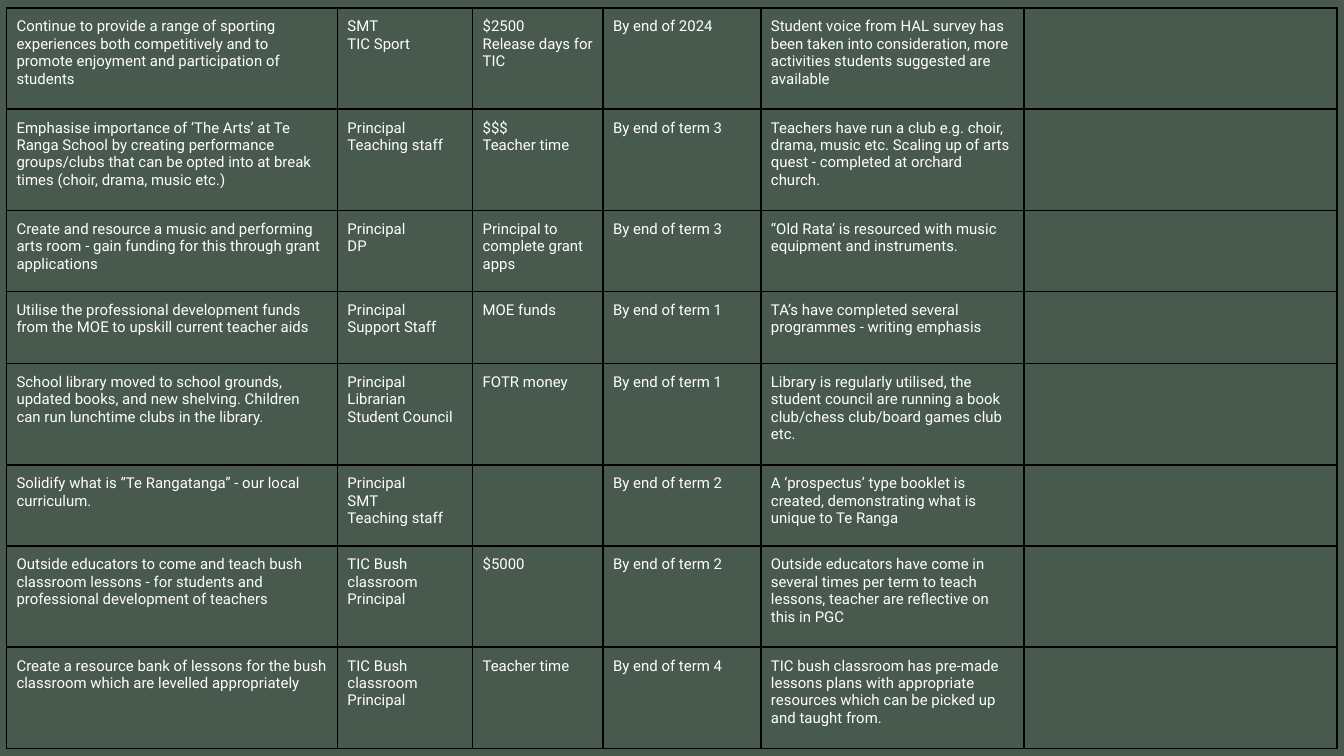
from lxml.etree import SubElement
from pptx import Presentation
from pptx.dml.color import RGBColor as Color
from pptx.oxml.ns import qn
from pptx.util import Pt

COLORS = {"background": "485A4E", "text": "FFFFFF", "border": "000000"}
COLUMN_WIDTHS = [177.3, 72.4, 69.9, 84.6, 140.9, 167.7]
ROW_HEIGHTS = [54.3, 54.3, 43.4, 38.6, 54.3, 43.4, 54.3, 54.3]
ACTIONS = [
    ["Continue to provide a range of sporting experiences both competitively and to promote enjoyment and participation of students",
     "SMT\nTIC Sport", "$2500\nRelease days for TIC", "By end of 2024",
     "Student voice from HAL survey has been taken into consideration, more activities students suggested are available"],
    ["Emphasise importance of ‘The Arts’ at Te Ranga School by creating performance groups/clubs that can be opted into at break times (choir, drama, music etc.)",
     "Principal\nTeaching staff", "$$$\nTeacher time", "By end of term 3",
     "Teachers have run a club e.g. choir, drama, music etc. Scaling up of arts quest - completed at orchard church."],
    ["Create and resource a music and performing arts room - gain funding for this through grant applications",
     "Principal\nDP", "Principal to complete grant apps", "By end of term 3",
     "“Old Rata’ is resourced with music equipment and instruments."],
    ["Utilise the professional development funds from the MOE to upskill current teacher aids",
     "Principal\nSupport Staff", "MOE funds", "By end of term 1",
     "TA’s have completed several programmes - writing emphasis"],
    ["School library moved to school grounds, updated books, and new shelving. Children can run lunchtime clubs in the library.",
     "Principal\nLibrarian\nStudent Council", "FOTR money", "By end of term 1",
     "Library is regularly utilised, the student council are running a book club/chess club/board games club etc."],
    ["Solidify what is “Te Rangatanga” - our local curriculum.",
     "Principal\nSMT\nTeaching staff", "", "By end of term 2",
     "A ‘prospectus’ type booklet is created, demonstrating what is unique to Te Ranga"],
    ["Outside educators to come and teach bush classroom lessons - for students and professional development of teachers",
     "TIC Bush classroom\nPrincipal", "$5000", "By end of term 2",
     "Outside educators have come in several times per term to teach lessons, teacher are reflective on this in PGC"],
    ["Create a resource bank of lessons for the bush classroom which are levelled appropriately",
     "TIC Bush classroom\nPrincipal", "Teacher time", "By end of term 4",
     "TIC bush classroom has pre-made lessons plans with appropriate resources which can be picked up and taught from."],
]


class PlanPage:
    font = "Roboto"
    size = Pt(8)
    margin = Pt(5.4)
    border_width = Pt(1)

    def __init__(self, deck):
        self.page = deck.slides.add_slide(deck.slide_layouts[6])
        fill = self.page.background.fill
        fill.solid()
        fill.fore_color.rgb = Color.from_string(COLORS["background"])

    def borders(self, cell):
        properties = cell._tc.get_or_add_tcPr()
        for side in ("lnL", "lnR", "lnT", "lnB"):
            line = SubElement(properties, qn(f"a:{side}"), w=str(self.border_width))
            paint = SubElement(line, qn("a:solidFill"))
            SubElement(paint, qn("a:srgbClr"), val=COLORS["border"])

    def cell(self, cell, text):
        cell.margin_left = cell.margin_right = self.margin
        cell.margin_top = cell.margin_bottom = self.margin
        self.borders(cell)
        cell.fill.background()
        cell.text_frame.text = text
        for para in cell.text_frame.paragraphs:
            for span in para.runs:
                span.font.name = self.font
                span.font.size = self.size
                span.font.color.rgb = Color.from_string(COLORS["text"])

    def table(self, left, top, widths, heights, rows):
        frame = self.page.shapes.add_table(
            len(heights), len(widths), Pt(left), Pt(top), Pt(sum(widths)), Pt(sum(heights)))
        table = frame.table
        table.first_row = table.horz_banding = False
        for column, width in zip(table.columns, widths):
            column.width = Pt(width)
        for row, height, texts in zip(table.rows, heights, rows):
            row.height = Pt(height)
            for cell, text in zip(row.cells, texts + [""]):
                self.cell(cell, text)


def main():
    deck = Presentation()
    deck.slide_width, deck.slide_height = Pt(720), Pt(405)
    plan = PlanPage(deck)
    plan.table(3.5, 4.2, COLUMN_WIDTHS, ROW_HEIGHTS, ACTIONS)
    deck.save("out.pptx")


if __name__ == "__main__":
    main()
